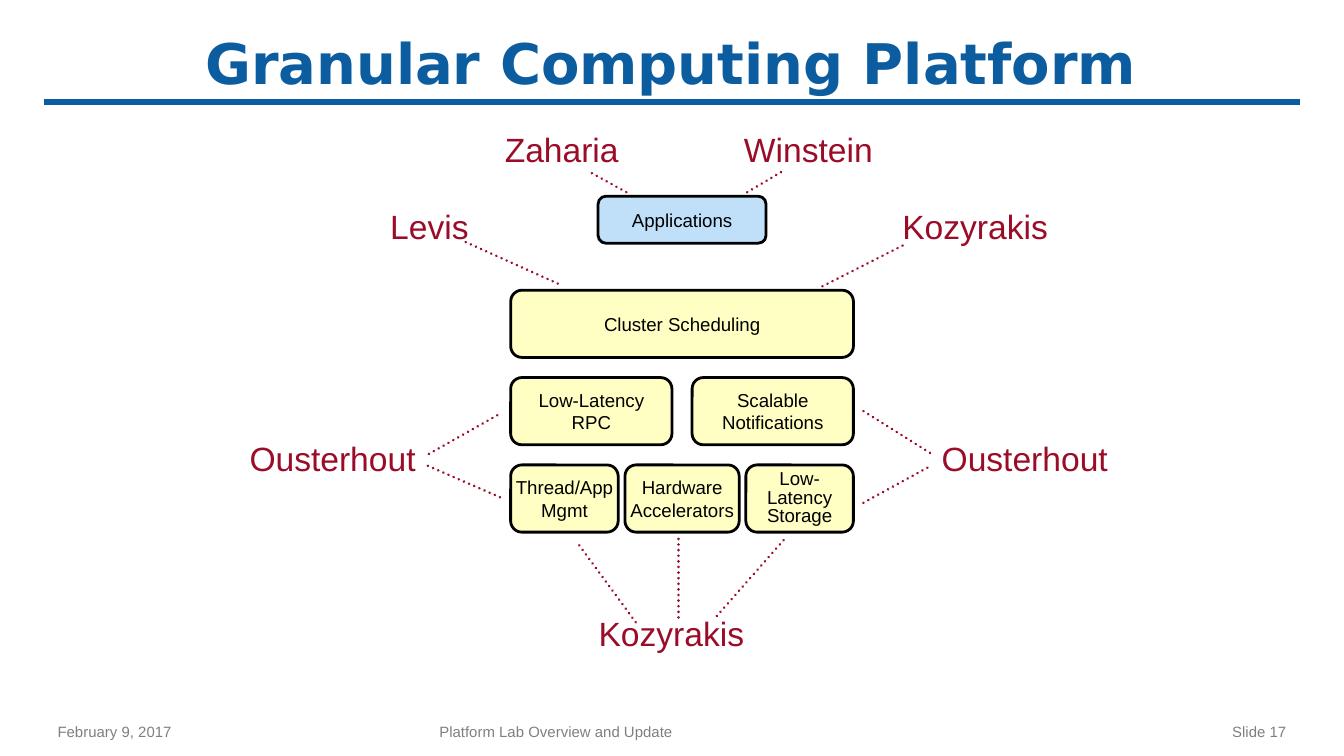
from dataclasses import dataclass

import pptx
import pptx.util
import pptx.dml.color
import pptx.enum.dml
import pptx.enum.shapes
import pptx.enum.text
import pptx.oxml.ns
from lxml import etree

WIDE = 10
HIGH = WIDE * 9 / 16
CELL, TOP = 0.05, 0.01
COLORS = {"blue": "0C5DA0", "gray": "7F7F7F", "red": "9A0C27", "black": "000000",
          "yellow": "FFFEC3", "sky": "C0E0FA"}
ALIGN = pptx.enum.text.PP_ALIGN
MIDDLE = pptx.enum.text.MSO_ANCHOR.MIDDLE


@dataclass
class Box:
    text: str
    col: float
    row: float
    wide: float
    high: float = 10
    fill: str = "yellow"
    lead: int | None = None


@dataclass
class Label:
    text: str
    col: float
    row: float
    wide: float


@dataclass
class Link:
    col: float
    row: float
    to_col: float
    to_row: float


@dataclass
class Foot:
    text: str
    left: float
    wide: float
    align: ALIGN = ALIGN.LEFT


BOXES = [
    Box("Cluster Scheduling", 76, 43, 51),
    Box("Low-Latency\nRPC", 76, 56, 24),
    Box("Scalable\nNotifications", 103, 56, 24),
    Box("Thread/App\nMgmt", 76, 69, 16),
    Box("Low-Latency\nStorage", 111, 69, 16, lead=10),
    Box("Hardware\nAccelerators", 93, 69, 17),
    Box("Applications", 89, 29, 25, 7, "sky"),
]
LABELS = [
    Label("Levis", 58, 31.4, 11.8),
    Label("Kozyrakis", 89, 92, 21.8),
    Label("Ousterhout", 140, 66, 25),
    Label("Winstein", 110.6, 20, 19.4),
    Label("Ousterhout", 37, 66, 25),
    Label("Kozyrakis", 134.2, 31.4, 21.8),
    Label("Zaharia", 75, 20, 17.2),
]
LINKS = [
    Link(83, 42, 68.8, 35.6),
    Link(116.6, 80.2, 106.2, 92),
    Link(94.6, 92.4, 85.8, 80.4),
    Link(111.2, 28.4, 116.6, 25.2),
    Link(74, 61.6, 63.4, 67.6),
    Link(74.4, 73.8, 63.4, 69),
    Link(138, 69.4, 127.8, 75),
    Link(138.4, 67.2, 128.2, 60.8),
    Link(122.4, 42.4, 135, 36),
    Link(93.2, 28.4, 87.4, 25.2),
    Link(101, 80, 101, 92),
]
FEET = [
    Foot("February 9, 2017", 0.33, 2.5),
    Foot("Platform Lab Overview and Update", 3.17, 3.75),
    Foot("Slide 17", 7.17, 2.5, ALIGN.RIGHT),
]


def inch(size: float) -> int:
    """Turn inches into slide units."""
    return pptx.util.Inches(size)


def across(col: float) -> int:
    """Give the length of a number of columns."""
    return inch(col * CELL)


def down(row: float) -> int:
    """Give the position of a grid row."""
    return inch(TOP + row * CELL)


def tint(name: str) -> pptx.dml.color.RGBColor:
    """Look up a named colour."""
    return pptx.dml.color.RGBColor.from_string(COLORS[name])


def write(frame, text: str, size: int, color: str, align=ALIGN.CENTER,
          lead: int | None = None, face: str = "Arial") -> None:
    """Fill a text frame with evenly styled paragraphs."""
    frame.text = text
    for para in frame.paragraphs:
        para.alignment = align
        para.font.size = pptx.util.Pt(size)
        para.font.name = face
        para.font.color.rgb = tint(color)
        if lead:
            para.line_spacing = pptx.util.Pt(lead)


def strip(frame) -> None:
    """Remove all insets of a text frame."""
    frame.margin_left = frame.margin_right = frame.margin_top = frame.margin_bottom = 0


def draw_box(slide, box: Box) -> None:
    """Draw one rounded block of the platform."""
    shape = slide.shapes.add_shape(
        pptx.enum.shapes.MSO_SHAPE.ROUNDED_RECTANGLE,
        across(box.col), down(box.row), across(box.wide), across(box.high))
    shape.shadow.inherit = False
    shape.fill.solid()
    shape.fill.fore_color.rgb = tint(box.fill)
    shape.line.color.rgb = tint("black")
    shape.line.width = pptx.util.Pt(1.5)
    frame = shape.text_frame
    strip(frame)
    frame.word_wrap = True
    frame.vertical_anchor = MIDDLE
    write(frame, box.text, 10, "black", lead=box.lead)


def draw_label(slide, label: Label) -> None:
    """Write one person's name."""
    frame = slide.shapes.add_textbox(
        across(label.col), down(label.row), across(label.wide), across(5)).text_frame
    strip(frame)
    frame.word_wrap = False
    frame.auto_size = pptx.enum.text.MSO_AUTO_SIZE.SHAPE_TO_FIT_TEXT
    write(frame, label.text, 18, "red", lead=18)


def draw_line(slide, ends: tuple, color: str, width: float, cap: str):
    """Draw a straight line without a shadow."""
    line = slide.shapes.add_connector(pptx.enum.shapes.MSO_CONNECTOR.STRAIGHT, *ends)
    line.line.color.rgb = tint(color)
    line.line.width = pptx.util.Pt(width)
    line.line._get_or_add_ln().set("cap", cap)
    etree.SubElement(line._element.spPr, pptx.oxml.ns.qn("a:effectLst"))
    return line


def draw_link(slide, link: Link) -> None:
    """Draw a dotted link between a name and a block."""
    ends = across(link.col), down(link.row), across(link.to_col), down(link.to_row)
    line = draw_line(slide, ends, "red", 1.5, "rnd")
    line.line.dash_style = pptx.enum.dml.MSO_LINE.ROUND_DOT


def draw_foot(slide, foot: Foot) -> None:
    """Write one part of the footer."""
    frame = slide.shapes.add_textbox(
        inch(foot.left), inch(5.32), inch(foot.wide), inch(0.24)).text_frame
    frame.word_wrap = True
    frame.vertical_anchor = MIDDLE
    write(frame, foot.text, 8, "gray", foot.align)


def draw_title(slide) -> None:
    """Place the title and the rule below it."""
    title = slide.shapes.title
    title.left, title.top, title.width, title.height = map(inch, (0.33, 0.16, 9.33, 0.6))
    frame = title.text_frame
    frame.auto_size = pptx.enum.text.MSO_AUTO_SIZE.NONE
    frame.vertical_anchor = MIDDLE
    write(frame, "Granular Computing Platform", 30, "blue", face="DejaVu Sans")
    frame.paragraphs[0].font.bold = True
    draw_line(slide, tuple(map(inch, (0.35, 0.76, 9.65, 0.76))), "blue", 3.5, "sq")


def main() -> None:
    """Build and save the slide."""
    deck = pptx.Presentation()
    deck.slide_width, deck.slide_height = inch(WIDE), inch(HIGH)
    slide = deck.slides.add_slide(deck.slide_layouts[5])
    draw_title(slide)
    for draw, items in ((draw_foot, FEET), (draw_box, BOXES),
                        (draw_label, LABELS), (draw_link, LINKS)):
        for item in items:
            draw(slide, item)
    deck.save("out.pptx")


if __name__ == "__main__":
    main()
